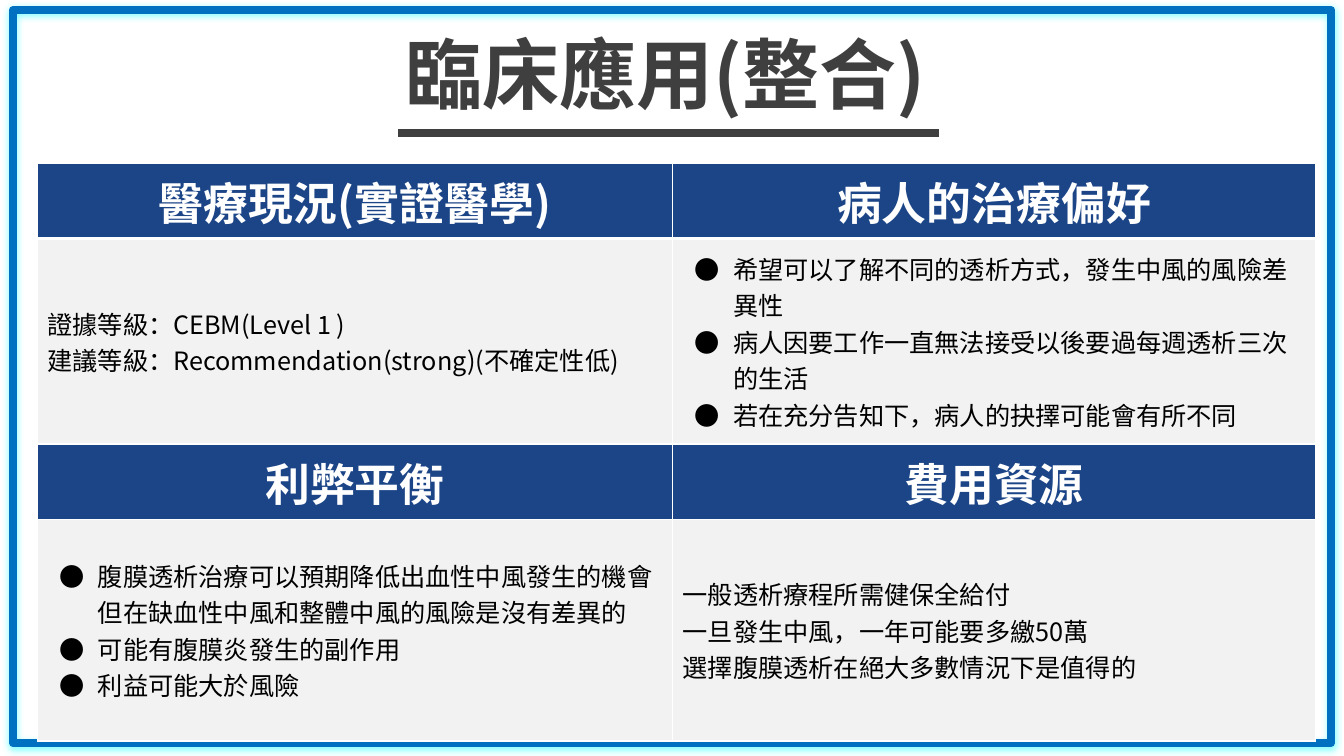
"""Build the clinical application slide: a framed title above a two-by-two table."""
from lxml.etree import SubElement
from pptx import Presentation
from pptx.dml.color import RGBColor
from pptx.enum.shapes import MSO_CONNECTOR, MSO_SHAPE
from pptx.enum.text import MSO_ANCHOR, PP_ALIGN
from pptx.oxml import parse_xml
from pptx.oxml.ns import nsdecls, qn
from pptx.util import Inches, Pt

FONT = "Noto Sans CJK SC"
COLORS = {"frame": "0070C0", "glow": "00FFFF", "title": "3F3F3F", "heading": "1C4587",
          "body": "F2F2F2", "white": "FFFFFF", "black": "000000"}
COLUMNS = [6.3, 6.38]
ROWS = [0.63, 2.04, 0.59, 2.2]
PLAIN, BULLET, CONTINUED = "plain", "bullet", "continued"

TOPICS = [
    [("醫療現況(實證醫學)", [
        (PLAIN, "證據等級：CEBM(Level 1 )"),
        (PLAIN, "建議等級：Recommendation(strong)(不確定性低)")]),
     ("病人的治療偏好", [
         (BULLET, "希望可以了解不同的透析方式，發生中風的風險差異性"),
         (BULLET, "病人因要工作一直無法接受以後要過每週透析三次的生活"),
         (BULLET, "若在充分告知下，病人的抉擇可能會有所不同")])],
    [("利弊平衡", [
        (BULLET, "腹膜透析治療可以預期降低出血性中風發生的機會"),
        (CONTINUED, "但在缺血性中風和整體中風的風險是沒有差異的"),
        (BULLET, "可能有腹膜炎發生的副作用"),
        (BULLET, "利益可能大於風險")]),
     ("費用資源", [
         (PLAIN, "一般透析療程所需健保全給付"),
         (PLAIN, "一旦發生中風，一年可能要多繳50萬"),
         (PLAIN, "選擇腹膜透析在絕大多數情況下是值得的")])],
]


def write(paragraph, text, size, color, bold=False):
    run = paragraph.add_run()
    run.text = text
    run.font.size = Pt(size)
    run.font.bold = bold
    run.font.color.rgb = RGBColor.from_string(COLORS[color])
    run.font.name = FONT
    SubElement(run.font._element, qn("a:ea"), typeface=FONT)


def style_cell(cell, fill, bottom_width):
    cell.fill.solid()
    cell.fill.fore_color.rgb = RGBColor.from_string(COLORS[fill])
    for position, (side, width) in enumerate(zip("LRTB", (1, 1, 1, bottom_width))):
        cell._tc.get_or_add_tcPr().insert(position, parse_xml(
            f'<a:ln{side} {nsdecls("a")} w="{Pt(width)}"><a:solidFill>'
            f'<a:srgbClr val="{COLORS["white"]}"/></a:solidFill></a:ln{side}>'))


prs = Presentation()
prs.slide_width, prs.slide_height = Inches(13.33), Inches(7.5)
slide = prs.slides.add_slide(prs.slide_layouts[6])
shapes = slide.shapes

frame = shapes.add_shape(MSO_SHAPE.RECTANGLE, Inches(0.13), Inches(0.1),
                         Inches(13.07), Inches(7.27))
frame.fill.background()
frame.line.color.rgb = RGBColor.from_string(COLORS["frame"])
frame.line.width = Pt(6)
frame._element.spPr.append(parse_xml(
    f'<a:effectLst {nsdecls("a")}><a:outerShdw blurRad="{Pt(4.5)}" dist="{Pt(1.5)}" '
    f'dir="5400000" algn="ctr" rotWithShape="0"><a:srgbClr val="{COLORS["glow"]}">'
    '<a:alpha val="50000"/></a:srgbClr></a:outerShdw></a:effectLst>'))

table = shapes.add_table(len(ROWS), len(COLUMNS), Inches(0.37), Inches(1.62),
                         Inches(sum(COLUMNS)), Inches(sum(ROWS))).table
table.first_row = table.horz_banding = False
for column, width in zip(table.columns, COLUMNS):
    column.width = Inches(width)
for row, height in zip(table.rows, ROWS):
    row.height = Inches(height)

for band, topics in enumerate(TOPICS):
    for side, (heading, points) in enumerate(topics):
        heading_cell = table.cell(2 * band, side)
        style_cell(heading_cell, "heading", 3 if band == 0 else 1)
        heading_line = heading_cell.text_frame.paragraphs[0]
        heading_line.alignment = PP_ALIGN.CENTER
        write(heading_line, heading, 32, "white", True)

        body_cell = table.cell(2 * band + 1, side)
        style_cell(body_cell, "body", 1)
        body_cell.vertical_anchor = MSO_ANCHOR.MIDDLE
        body = body_cell.text_frame
        for index, (kind, text) in enumerate(points):
            point = body.add_paragraph() if index else body.paragraphs[0]
            write(point, text, 18, "black")
            if kind == PLAIN:
                continue
            layout = point._p.get_or_add_pPr()
            layout.set("marL", str(Inches(0.5)))
            layout.set("indent", str(Inches(-0.38 if kind == BULLET else 0)))
            if kind == BULLET:
                bullet_color = SubElement(layout, qn("a:buClr"))
                SubElement(bullet_color, qn("a:srgbClr"), val=COLORS["black"])
                SubElement(layout, qn("a:buFont"), typeface=FONT)
                SubElement(layout, qn("a:buChar"), char="●")

title = shapes.add_textbox(Inches(0.22), Inches(0.21), Inches(12.76), Inches(1.03)).text_frame
title.word_wrap = True
title.paragraphs[0].alignment = PP_ALIGN.CENTER
write(title.paragraphs[0], "臨床應用(整合)", 55, "title", True)

underline = shapes.add_connector(MSO_CONNECTOR.STRAIGHT, Inches(3.95), Inches(1.32),
                                 Inches(9.31), Inches(1.32))
underline.line.color.rgb = RGBColor.from_string(COLORS["title"])
underline.line.width = Pt(6)
SubElement(underline._element.spPr, qn("a:effectLst"))

prs.save("out.pptx")
